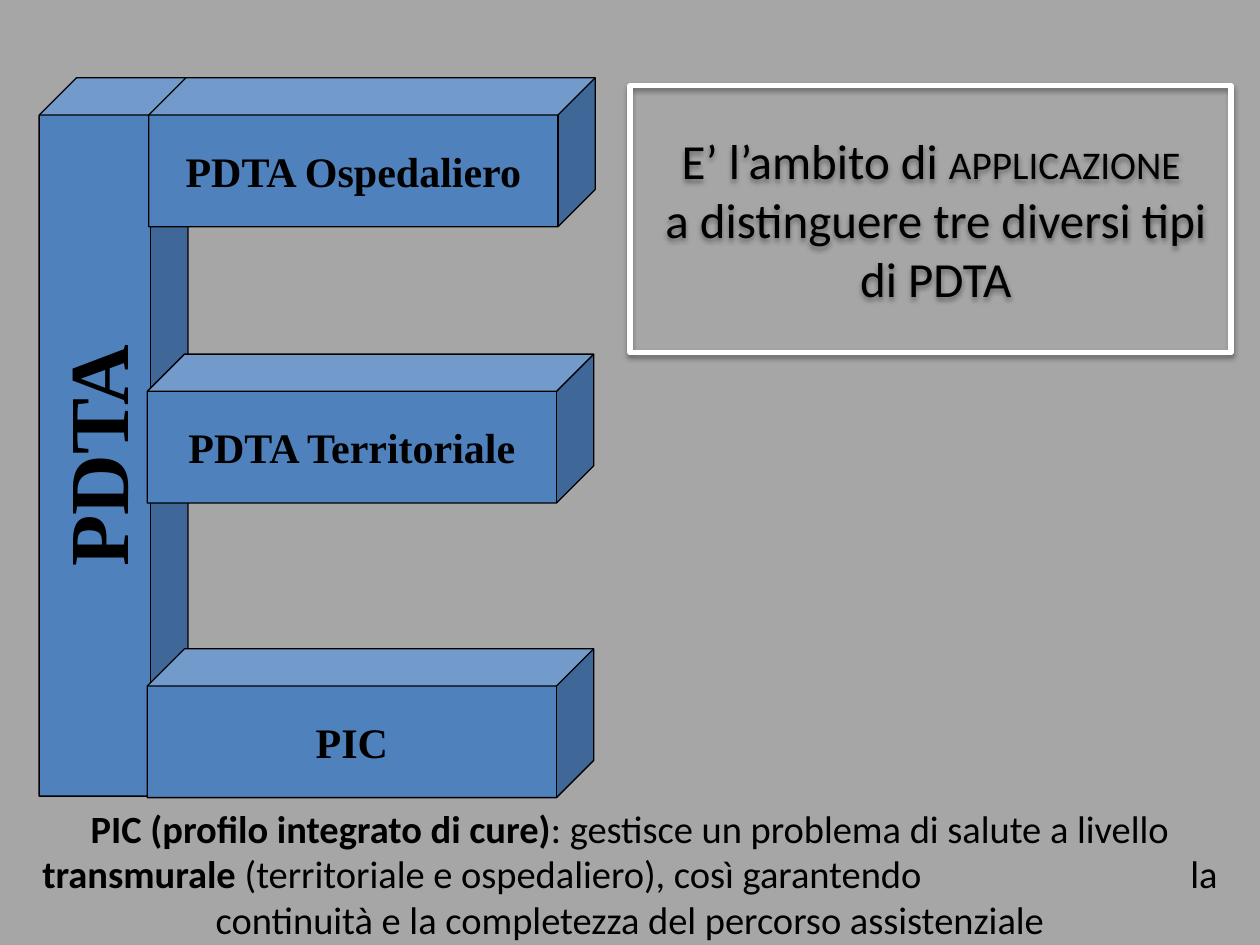
from dataclasses import dataclass

from lxml import etree
from pptx import Presentation
from pptx import util as u
from pptx.dml.color import RGBColor
from pptx.enum import shapes, text
from pptx.oxml import ns

Cm, Pt = u.Cm, u.Pt
SERIF, SANS = "Times New Roman", "Calibri"
DEPTH = 3


@dataclass
class Run:
    words: str
    size: float
    font: str = SANS
    bold: bool = False
    small: bool = False


@dataclass
class Bar:
    label: str
    left: float
    top: float
    width: float
    height: float
    size: float = 24
    turn: bool = False


BARS = [
    Bar("PDTA", 0.79, 1.57, DEPTH, 14.48, 48, True),
    Bar("PDTA Ospedaliero", 3, 1.57, 9, DEPTH),
    Bar("PDTA Territoriale", 2.97, 7.14, 9, DEPTH),
    Bar("PIC", 2.97, 13.08, 9, DEPTH),
]
TITLE = [
    [Run("E’ l’ambito di ", 28), Run("applicazione ", 28, small=True)],
    [Run("a distinguere tre diversi tipi di PDTA", 28)],
]
NOTE = [
    Run("PIC (profilo integrato di cure)", 22, bold=True),
    Run(": gestisce un problema di salute a livello ", 22),
    Run("transmurale", 22, bold=True),
    Run(" (territoriale e ospedaliero), così garantendo\t"
        "la continuità e la completezza del percorso assistenziale", 22),
]


def paint(target, code: str) -> None:
    if hasattr(target, "solid"):
        target.solid()
        target = target.fore_color
    target.rgb = RGBColor.from_string(code)


def node(parent, tag: str, **attrs: str):
    return etree.SubElement(parent, ns.qn(tag), attrs)


def write(para, runs: list[Run]) -> None:
    para.alignment = text.PP_ALIGN.CENTER
    for item in runs:
        run = para.add_run()
        run.text = item.words
        font = run.font
        font.size, font.name, font.bold = Pt(item.size), item.font, item.bold
        paint(font.fill, "000000")
        if item.small:
            font._element.set("cap", "small")


def frame(shape, wrap: bool, pads: list[float]):
    box = shape.text_frame
    box.word_wrap = wrap
    box.vertical_anchor = text.MSO_ANCHOR.MIDDLE
    (box.margin_left, box.margin_top,
     box.margin_right, box.margin_bottom) = map(Cm, pads)
    return box


def draw_bar(slide, bar: Bar) -> None:
    cube = slide.shapes.add_shape(
        shapes.MSO_SHAPE.CUBE,
        *map(Cm, (bar.left, bar.top, bar.width, bar.height)))
    cube.shadow.inherit = False
    paint(cube.fill, "4F81BD")
    paint(cube.line.fill, "000000")
    cube.line.width = Pt(0.75)
    box = frame(cube, False, [0.25, 0.13, 0.25, 0.13])
    if bar.turn:
        box._txBody.bodyPr.set("vert", "vert270")
    write(box.paragraphs[0], [Run(bar.label, bar.size, SERIF, True)])


def draw_title(slide) -> None:
    card = slide.shapes.add_shape(
        shapes.MSO_SHAPE.RECTANGLE, *map(Cm, (12.7, 1.73, 12.12, 5.38)))
    card.fill.background()
    paint(card.line.fill, "FFFFFF")
    card.line.width = Pt(3)
    card.shadow.inherit = False
    glow = card._element.spPr.find(ns.qn("a:effectLst"))
    shade = node(glow, "a:outerShdw", blurRad=str(Pt(3.1)), dist=str(Pt(1.6)),
                 dir="5400000", rotWithShape="0")
    tint = node(shade, "a:srgbClr", val="000000")
    node(tint, "a:alpha", val="38000")
    box = frame(card, True, [0.51, 0.3, 0.3, 0.3])
    write(box.paragraphs[0], TITLE[0])
    for runs in TITLE[1:]:
        write(box.add_paragraph(), runs)


def draw_note(slide) -> None:
    area = slide.shapes.add_textbox(*map(Cm, (0.2, 16.23, 25, 2.77)))
    para = frame(area, True, [0, 0, 0, 0]).paragraphs[0]
    para.line_spacing = Pt(26)
    write(para, NOTE)
    tabs = node(para._p.get_or_add_pPr(), "a:tabLst")
    node(tabs, "a:tab", pos=str(Cm(23.14)), algn="l")


def main() -> None:
    deck = Presentation()
    deck.slide_width, deck.slide_height = Cm(25.4), Cm(19.05)
    slide = deck.slides.add_slide(deck.slide_layouts[6])
    paint(slide.background.fill, "A6A6A6")
    draw_title(slide)
    draw_note(slide)
    for bar in BARS:
        draw_bar(slide, bar)
    deck.save("out.pptx")


if __name__ == "__main__":
    main()
